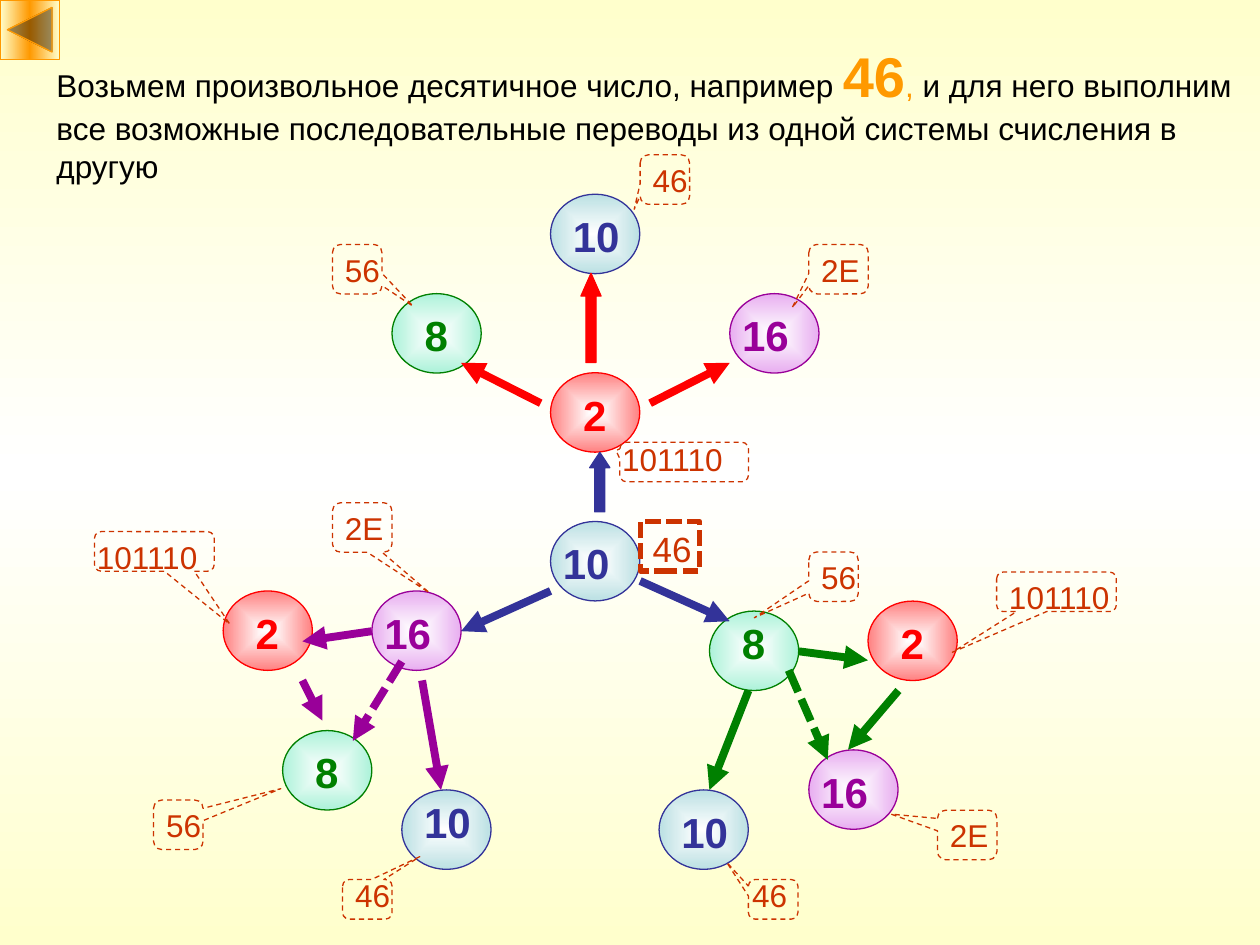
from dataclasses import dataclass

import pptx
import pptx.util
import pptx.dml.color
import pptx.enum.dml
import pptx.enum.shapes
import pptx.enum.text
import pptx.oxml
import pptx.oxml.ns
from lxml import etree

Pt = pptx.util.Pt
qn = pptx.oxml.ns.qn
Kind = pptx.enum.shapes.MSO_SHAPE
Dash = pptx.enum.dml.MSO_LINE

RED, GREEN, BLUE, PLUM = "FF0000", "008000", "333399", "990099"
RUST, GOLD, CREAM, WHITE = "CC3300", "FF9900", "FFFFCC", "FFFFFF"
NODE_W, NODE_H = 51, 45.4


@dataclass
class Base:
    line: str
    tint: str
    dx: float
    width: float


@dataclass
class Node:
    base: str
    x: float
    y: float
    dx: float | None = None
    dy: float = 5.8


@dataclass
class Arrow:
    color: str
    x1: float
    y1: float
    x2: float
    y2: float
    dots: bool = False


@dataclass
class Block:
    color: str
    x: float
    y: float
    h: float
    head: float


@dataclass
class Note:
    text: str
    x: float
    y: float
    w: float
    h: float
    tip_x: float
    tip_y: float
    dx: float = 0
    dy: float = 0


BASES = {
    "2": Base(RED, "FF8181", 11.5, 34),
    "8": Base(GREEN, "ACF2D9", 11.5, 34),
    "10": Base(BLUE, "BBE0E3", 5.7, 45.4),
    "16": Base(PLUM, "E8AEF0", 0, 56.7),
}

NODES = [
    Node("10", 314.6, 298, dx=0),
    # Branch through base 2
    Node("2", 314.6, 213), Node("10", 314.6, 111),
    Node("8", 224, 167.8), Node("16", 417, 167.8),
    # Branch through base 16
    Node("16", 212.5, 337.7), Node("2", 127.5, 337.7),
    Node("8", 161.5, 417.5), Node("10", 229.6, 451.4, dy=0),
    # Branch through base 8
    Node("8", 405.4, 349.2, dy=0), Node("2", 496, 343.5),
    Node("16", 462.2, 428.5), Node("10", 376.6, 451.4),
]

ARROWS = [
    Arrow(RED, 309, 230.4, 263.5, 207.4),
    Arrow(RED, 371.5, 230.4, 417, 207.4),
    Arrow(BLUE, 314.6, 337.7, 263.5, 360.7),
    Arrow(BLUE, 365.8, 332, 417, 355),
    Arrow(PLUM, 212.5, 360.7, 172.8, 366.5),
    Arrow(PLUM, 172.8, 388.8, 184.3, 411.8),
    Arrow(PLUM, 229.6, 378, 201.6, 423.4, dots=True),
    Arrow(PLUM, 241.2, 388.8, 252, 451.4),
    Arrow(GREEN, 456.5, 372.2, 496, 377.3),
    Arrow(GREEN, 513.4, 394.6, 484.6, 428.4),
    Arrow(GREEN, 450.7, 383, 473, 434.2, dots=True),
    Arrow(GREEN, 427.7, 394.6, 405.4, 451.4),
]

BLOCKS = [Block(RED, 332, 156.2, 51, 1.13), Block(BLUE, 337, 258.5, 34, 0.76)]

NOTES = [
    Note("46", 365.8, 88.5, 28.3, 28.3, -0.62, 0.6),
    Note("56", 190, 139.7, 28.3, 28.3, 1.13, 0.75),
    Note("2E", 462.2, 139.7, 34, 28.3, -0.78, 0.78),
    Note("101110", 354.2, 252.7, 73.5, 22.6, -0.53, -0.29, -5.7, -5),
    Note("2E", 190, 287.3, 34, 28.3, 1.13, 1.32),
    Note("101110", 54, 303.8, 68.4, 22.6, 0.63, 1.84, -5.7),
    Note("56", 462.2, 315.4, 28.3, 28.3, -1.6, 0.83),
    Note("101110", 569.5, 326.9, 68.4, 22.6, -0.87, 1.53),
    Note("56", 87.8, 457.2, 28.3, 28.3, 2.07, -0.73),
    Note("46", 195.8, 502.6, 28.3, 22.6, 1.06, -1.08, 0, -5.7),
    Note("46", 427.7, 502.6, 28.3, 22.6, -0.94, -0.94, -5, -5.7),
    Note("2E", 535.7, 463, 34, 28.3, -1.28, -0.42),
]


def paint(code: str) -> pptx.dml.color.RGBColor:
    return pptx.dml.color.RGBColor.from_string(code)


def blend(owner, fill, stops: list[str], angle: float | None) -> None:
    """Gradient of evenly spaced stops; no angle means from the centre out."""
    fill.gradient()
    grad = owner.element.find(".//" + qn("a:gradFill"))
    for child in list(grad):
        grad.remove(child)
    rows = etree.SubElement(grad, qn("a:gsLst"))
    for i, code in enumerate(stops):
        stop = etree.SubElement(rows, qn("a:gs"), pos=str(i * 100000 // (len(stops) - 1)))
        etree.SubElement(stop, qn("a:srgbClr"), val=code)
    if angle is None:
        shade = etree.SubElement(grad, qn("a:path"), path="shape")
        etree.SubElement(shade, qn("a:fillToRect"), l="50000", t="50000", r="50000", b="50000")
    else:
        etree.SubElement(grad, qn("a:lin"), ang=str(int(angle * 60000)), scaled="1")


def add_form(slide, kind, x: float, y: float, w: float, h: float, color: str, width: float = 0.75):
    form = slide.shapes.add_shape(kind, Pt(x), Pt(y), Pt(w), Pt(h))
    form.shadow.inherit = False
    form.fill.background()
    form.line.color.rgb = paint(color)
    form.line.width = Pt(width)
    return form


def add_text(slide, x: float, y: float, w: float, h: float, runs: list[tuple]) -> None:
    """Each run is text, size, colour, bold."""
    frame = slide.shapes.add_textbox(Pt(x), Pt(y), Pt(w), Pt(h)).text_frame
    frame.word_wrap = True
    frame.auto_size = pptx.enum.text.MSO_AUTO_SIZE.SHAPE_TO_FIT_TEXT
    para = frame.paragraphs[0]
    gap = etree.SubElement(para._p.get_or_add_pPr(), qn("a:spcBef"))
    etree.SubElement(gap, qn("a:spcPct"), val="50000")
    for text, size, color, bold in runs:
        run = para.add_run()
        run.text = text
        run.font.name = "Arial"
        run.font.size = Pt(size)
        run.font.bold = bold
        run.font.color.rgb = paint(color)


def add_node(slide, node: Node) -> None:
    base = BASES[node.base]
    disc = add_form(slide, Kind.OVAL, node.x, node.y, NODE_W, NODE_H, base.line)
    blend(disc, disc.fill, [WHITE, base.tint], None)
    dx = base.dx if node.dx is None else node.dx
    add_text(slide, node.x + dx, node.y + node.dy, base.width, 36,
             [(node.base, 24, base.line, True)])


def add_arrow(slide, arrow: Arrow) -> None:
    link = slide.shapes.add_connector(
        pptx.enum.shapes.MSO_CONNECTOR.STRAIGHT,
        Pt(arrow.x1), Pt(arrow.y1), Pt(arrow.x2), Pt(arrow.y2))
    link.line.color.rgb = paint(arrow.color)
    link.line.width = Pt(4.5)
    if arrow.dots:
        link.line.dash_style = Dash.SQUARE_DOT
    etree.SubElement(link.line._get_or_add_ln(), qn("a:tailEnd"), type="triangle")
    etree.SubElement(link.element.spPr, qn("a:effectLst"))


def add_block(slide, block: Block) -> None:
    form = add_form(slide, Kind.UP_ARROW, block.x, block.y, 11.5, block.h, block.color)
    form.adjustments[1] = block.head
    form.fill.solid()
    form.fill.fore_color.rgb = paint(block.color)


def add_note(slide, note: Note) -> None:
    form = add_form(slide, Kind.ROUNDED_RECTANGULAR_CALLOUT, note.x, note.y, note.w, note.h, RUST)
    form.line.dash_style = Dash.DASH
    form.adjustments[0] = note.tip_x
    form.adjustments[1] = note.tip_y
    add_text(slide, note.x + note.dx, note.y + note.dy, 91 if len(note.text) > 2 else 63, 29,
             [(note.text, 18, RUST, False)])


def main() -> None:
    deck = pptx.Presentation()
    deck.slide_width, deck.slide_height = Pt(720), Pt(540)
    slide = deck.slides.add_slide(deck.slide_layouts[6])
    blend(slide, slide.background.fill, [CREAM, WHITE, CREAM], 90)

    # Heading
    add_text(slide, 25.2, 20.2, 695, 88.6, [
        ("Возьмем произвольное десятичное число, например ", 18, "000000", False),
        ("46", 32, GOLD, True),
        (",", 18, GOLD, False),
        (" и для него выполним все возможные последовательные переводы "
         "из одной системы счисления в другую", 18, "000000", False),
    ])

    # Number systems and the steps between them
    for node in NODES:
        add_node(slide, node)
    for block in BLOCKS:
        add_block(slide, block)
    for arrow in ARROWS:
        add_arrow(slide, arrow)

    # Values in each system, with the starting one framed
    for note in NOTES:
        add_note(slide, note)
    frame = add_form(slide, Kind.RECTANGLE, 365.8, 298, 34, 28.3, RUST, 3)
    frame.line.dash_style = Dash.SQUARE_DOT
    add_text(slide, 365.8, 298, 63, 31, [("46", 20, RUST, False)])

    # Back button
    back = add_form(slide, Kind.ACTION_BUTTON_BACK_OR_PREVIOUS, 0, 0, 34, 34, GOLD)
    blend(back, back.fill, [CREAM, GOLD, CREAM], 0)

    deck.save("out.pptx")


if __name__ == "__main__":
    main()
